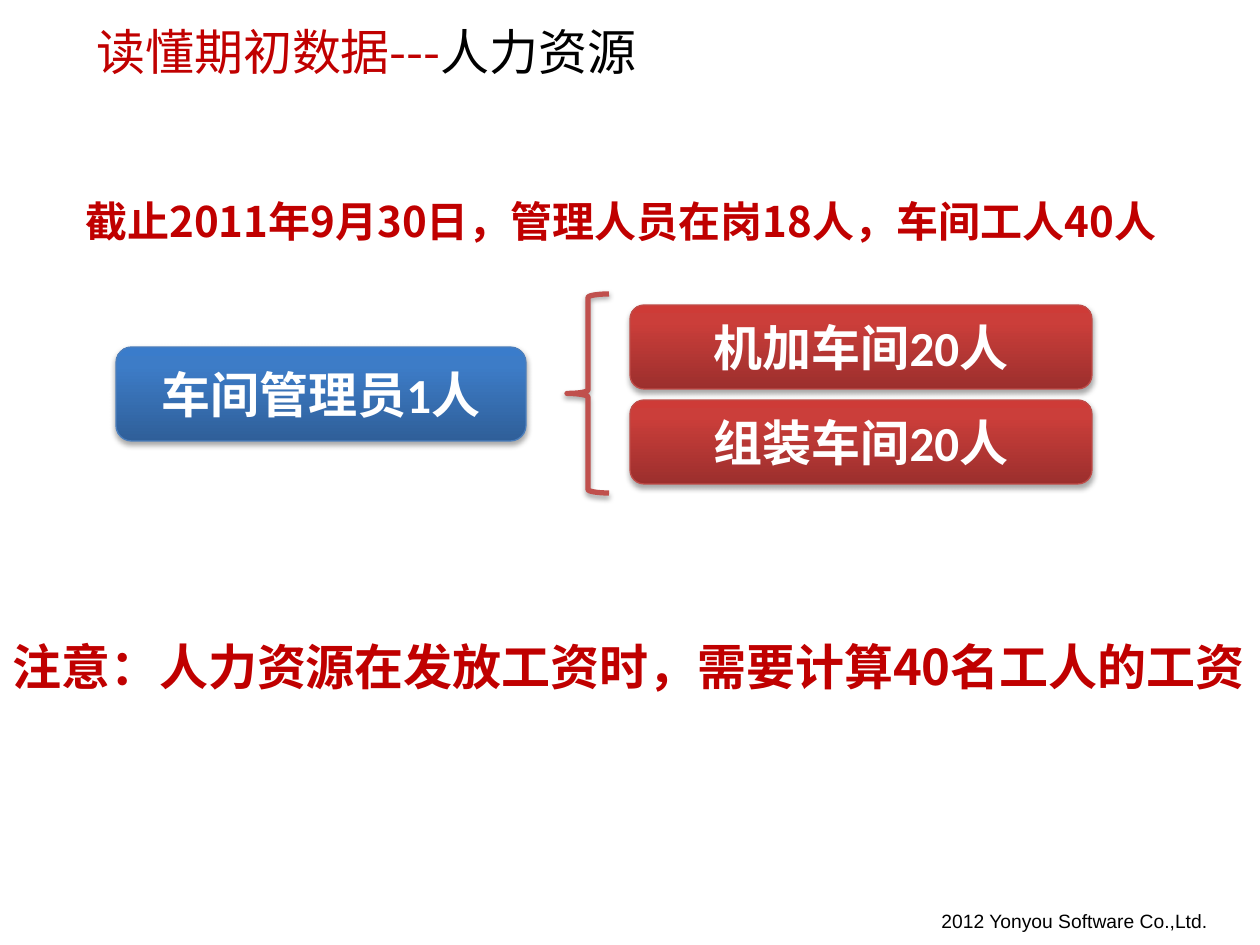
from lxml import etree
from pptx import Presentation
from pptx import util as u
from pptx.dml.color import RGBColor
from pptx.enum import shapes, text
from pptx.oxml import parse_xml
from pptx.oxml.ns import nsdecls, qn

PX = 914400 / 126
CJK, LATIN, FOOTER_FONT = "Noto Sans CJK SC", "Calibri", "Arial"
CRIMSON = RGBColor(0xC0, 0x00, 0x00)
BLACK = RGBColor(0x00, 0x00, 0x00)
WHITE = RGBColor(0xFF, 0xFF, 0xFF)
BRACE_RED = RGBColor(0xC0, 0x50, 0x4D)
RED_EDGE = RGBColor(0xBF, 0x4C, 0x48)
BLUE_EDGE = RGBColor(0x4B, 0x7E, 0xBC)
RED_STOPS = [(0, RGBColor(0x9C, 0x2F, 0x2D)), (80, RGBColor(0xCB, 0x3E, 0x3A)),
             (100, RGBColor(0xCE, 0x3B, 0x37))]
BLUE_STOPS = [(0, RGBColor(0x2F, 0x5F, 0x99)), (80, RGBColor(0x3D, 0x7C, 0xC7)),
              (100, RGBColor(0x3A, 0x7C, 0xCB))]


def emu(*px):
    return [round(v * PX) for v in px]


class SlideBuilder:
    def __init__(self, slide):
        self.shapes = slide.shapes

    def run(self, p, words, size, color, font, bold=False):
        r = p.add_run()
        r.text = words
        r.font.size = u.Pt(size)
        r.font.bold = bold
        r.font.color.rgb = color
        r.font.name = font
        ea = etree.SubElement(r._r.get_or_add_rPr(), qn("a:ea"))
        ea.set("typeface", CJK)

    def text(self, box, runs, size, font=CJK, bold=False, wrap=True,
             anchor=text.MSO_ANCHOR.TOP):
        """Add a one-paragraph text box; runs are (words, colour) pairs."""
        tf = self.shapes.add_textbox(*emu(*box)).text_frame
        tf.word_wrap = wrap
        tf.vertical_anchor = anchor
        for words, color in runs:
            self.run(tf.paragraphs[0], words, size, color, font, bold)

    def shadow(self, sp):
        """Give the shape a soft shadow straight below it."""
        sp.shadow.inherit = False
        sp._element.spPr.find(qn("a:effectLst")).append(parse_xml(
            f'<a:outerShdw {nsdecls("a")} blurRad="40000" dist="23000" '
            'dir="5400000" rotWithShape="0"><a:srgbClr val="000000">'
            '<a:alpha val="35000"/></a:srgbClr></a:outerShdw>'))

    def gradient(self, sp, stops):
        """Fill from bottom to top with (percent, colour) stops."""
        sp.fill.gradient()
        grad = sp._element.spPr.find(qn("a:gradFill"))
        stop_xml = "".join(f'<a:gs pos="{pos * 1000}"><a:srgbClr val="{color}"/></a:gs>'
                           for pos, color in stops)
        grad.replace(grad.find(qn("a:gsLst")), parse_xml(
            f'<a:gsLst {nsdecls("a")}>{stop_xml}</a:gsLst>'))
        sp.fill.gradient_angle = 90

    def card(self, box, words, stops, edge):
        sp = self.shapes.add_shape(shapes.MSO_SHAPE.ROUNDED_RECTANGLE, *emu(*box))
        self.gradient(sp, stops)
        sp.line.color.rgb = edge
        sp.line.width = u.Pt(0.75)
        self.shadow(sp)
        tf = sp.text_frame
        tf.word_wrap = True
        tf.vertical_anchor = text.MSO_ANCHOR.MIDDLE
        p = tf.paragraphs[0]
        p.alignment = text.PP_ALIGN.CENTER
        self.run(p, words, 28, WHITE, LATIN, bold=True)

    def brace(self, box):
        sp = self.shapes.add_shape(shapes.MSO_SHAPE.LEFT_BRACE, *emu(*box))
        sp.fill.background()
        sp.line.color.rgb = BRACE_RED
        sp.line.width = u.Pt(3)
        self.shadow(sp)


def main():
    prs = Presentation()
    prs.slide_width, prs.slide_height = emu(1260, 945)
    s = SlideBuilder(prs.slides.add_slide(prs.slide_layouts[6]))

    s.text((929, 903, 294, 37), [("2012 Yonyou Software Co.,Ltd.", BLACK)], 11,
           FOOTER_FONT, wrap=False)
    s.text((84, 10, 966, 81), [("读懂期初数据---", CRIMSON), ("人力资源", BLACK)], 28,
           anchor=text.MSO_ANCHOR.MIDDLE)
    s.text((73, 189, 1118, 64),
           [("截止2011年9月30日，管理人员在岗18人，车间工人40人", CRIMSON)], 24, bold=True)
    for i, workshop in enumerate(("机加车间20人", "组装车间20人")):
        s.card((630, 305 + i * 95, 462, 84), workshop, RED_STOPS, RED_EDGE)
    s.brace((567, 294, 42, 199))
    s.card((116, 347, 410, 94), "车间管理员1人", BLUE_STOPS, BLUE_EDGE)
    s.text((0, 630, 1268, 72),
           [("注意：人力资源在发放工资时，需要计算40名工人的工资", CRIMSON)], 28, bold=True)

    prs.save("out.pptx")


if __name__ == "__main__":
    main()
